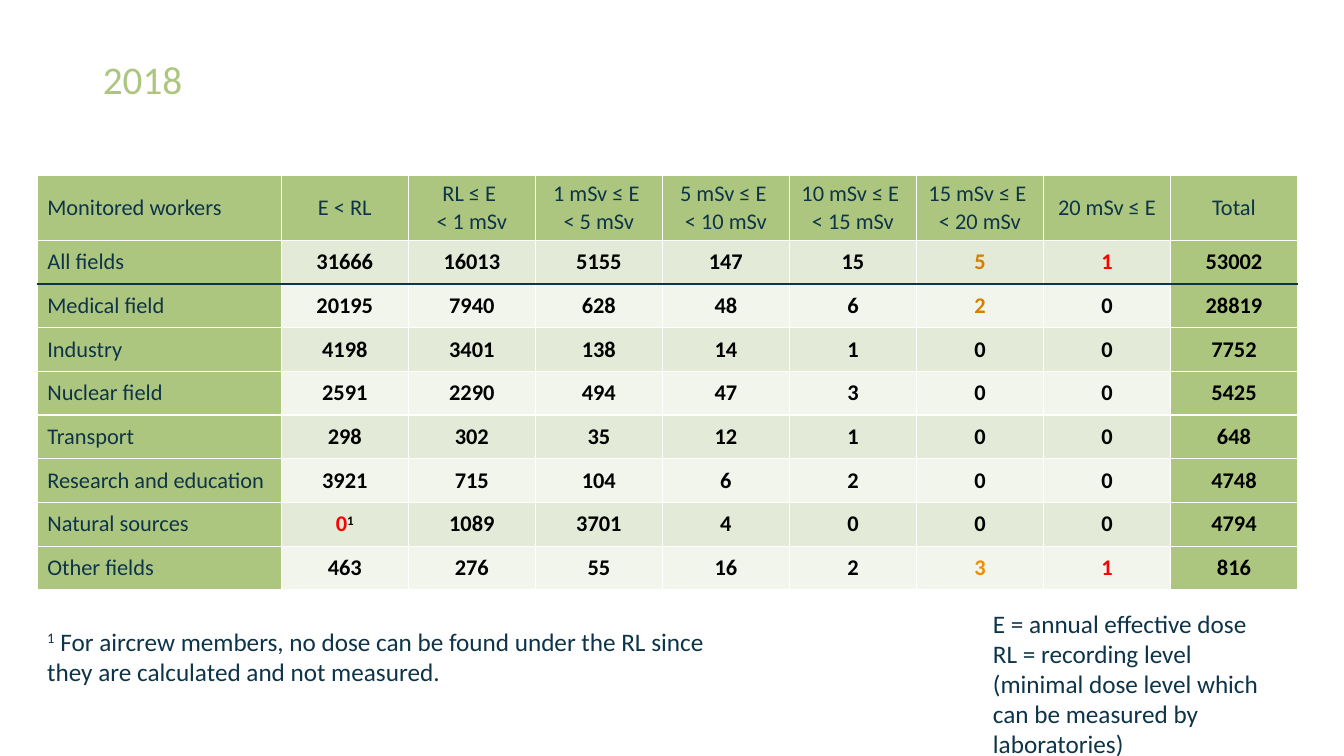
from lxml.etree import SubElement as Sub
from pptx import Presentation
from pptx.dml.color import RGBColor as RGB
from pptx.enum.text import MSO_ANCHOR as Anchor, MSO_AUTO_SIZE as Auto, PP_ALIGN as Align
from pptx.oxml.ns import qn
from pptx.util import Inches, Pt

COLORS = {
    "green": "ADC67F", "navy": "0E3449", "black": "000000", "white": "FFFFFF",
    "band": "E3EAD8", "pale": "F1F5EC", "red": "FF0000",
    "amber": "D67F00", "orange": "EE8E00",
}
HEADS = ["Monitored workers", "E < RL", "RL ≤ E \n< 1 mSv", "1 mSv ≤ E \n< 5 mSv",
         "5 mSv ≤ E \n< 10 mSv", "10 mSv ≤ E \n< 15 mSv", "15 mSv ≤ E \n< 20 mSv",
         "20 mSv ≤ E", "Total"]
DOSES = [
    ("All fields", 31666, 16013, 5155, 147, 15, 5, 1, 53002),
    ("Medical field", 20195, 7940, 628, 48, 6, 2, 0, 28819),
    ("Industry", 4198, 3401, 138, 14, 1, 0, 0, 7752),
    ("Nuclear field", 2591, 2290, 494, 47, 3, 0, 0, 5425),
    ("Transport", 298, 302, 35, 12, 1, 0, 0, 648),
    ("Research and education", 3921, 715, 104, 6, 2, 0, 0, 4748),
    ("Natural sources", 0, 1089, 3701, 4, 0, 0, 0, 4794),
    ("Other fields", 463, 276, 55, 16, 2, 3, 1, 816),
]
MARKS = {(1, 6): "amber", (1, 7): "red", (2, 6): "amber",
         (7, 1): "red", (8, 6): "orange", (8, 7): "red"}


def write(para, text, size=16, color="navy", bold=False, align=Align.LEFT, raised=False):
    para.alignment = align
    run = para.add_run()
    run.text = text
    font = run.font
    font.name, font.size, font.bold = "Calibri", Pt(size), bold
    font.color.rgb = RGB.from_string(COLORS[color])
    if raised:
        run._r.get_or_add_rPr().set("baseline", "30000")


def edge(cell, **sides):
    props = cell._tc.get_or_add_tcPr()
    for side in "LRTB":
        line = Sub(props, qn(f"a:ln{side}"), w=str(Pt(1)))
        fill = Sub(line, qn("a:solidFill"))
        Sub(fill, qn("a:srgbClr"), val=COLORS[sides.get(side, "white")])


def paint(cell, color):
    cell.fill.solid()
    cell.fill.fore_color.rgb = RGB.from_string(COLORS[color])
    cell.vertical_anchor = Anchor.MIDDLE


def add_title(slide, text):
    title = slide.shapes.title
    title.left, title.top = Inches(0.92), Inches(0.55)
    title.width, title.height = Inches(8.84), Inches(0.52)
    title.text_frame.vertical_anchor = Anchor.MIDDLE
    para = title.text_frame.paragraphs[0]
    para.line_spacing = 0.9
    write(para, text, size=28, color="green")


def add_grid(slide):
    rows, cols = len(DOSES) + 1, len(HEADS)
    frame = slide.shapes.add_table(rows, cols, Inches(0.37), Inches(1.74),
                                   Inches(12.49), Inches(4.11))
    grid = frame.table
    for c, col in enumerate(grid.columns):
        col.width = Inches(1.26 if c else 2.42)
    for r, row in enumerate(grid.rows):
        row.height = Inches(3.47 / len(DOSES) if r else 0.64)
    for r, values in enumerate([HEADS, *DOSES]):
        for c, value in enumerate(values):
            cell = grid.cell(r, c)
            edge(cell, T="navy" if r == 2 else "white", B="navy" if r == 1 else "white")
            outer = r == 0 or c in (0, cols - 1)
            paint(cell, "green" if outer else "band" if r % 2 else "pale")
            data = r > 0 and c > 0
            if data:
                cell.margin_left = cell.margin_right = 0
                cell.margin_top = cell.margin_bottom = 0
            text = cell.text_frame
            for i, part in enumerate(str(value).split("\n")):
                para = text.add_paragraph() if i else text.paragraphs[0]
                write(para, part, bold=data, align=Align.CENTER if c else Align.LEFT,
                      color=MARKS.get((r, c), "black" if data else "navy"))
    write(grid.cell(7, 1).text_frame.paragraphs[0], "1", color="black",
          bold=True, align=Align.CENTER, raised=True)


def add_note(slide, left, top, width, height, text, mark=""):
    box = slide.shapes.add_textbox(Inches(left), Inches(top), Inches(width), Inches(height))
    frame = box.text_frame
    frame.word_wrap = True
    frame.auto_size = Auto.SHAPE_TO_FIT_TEXT
    para = frame.paragraphs[0]
    if mark:
        write(para, mark, size=18, raised=True)
    write(para, text, size=18)


def main():
    deck = Presentation()
    deck.slide_width, deck.slide_height = Inches(13.33), Inches(7.5)
    slide = deck.slides.add_slide(deck.slide_layouts[5])
    add_title(slide, "2018")
    add_grid(slide)
    add_note(slide, 9.75, 6.28, 3.11, 1.31, "RL = recording level (minimal dose level "
             "which can be measured by laboratories)")
    add_note(slide, 9.75, 5.99, 3.11, 0.4, "E = annual effective dose")
    add_note(slide, 0.37, 6.16, 7.14, 0.71, " For aircrew members, no dose can be found "
             "under the RL since they are calculated and not measured.", mark="1")
    deck.save("out.pptx")


if __name__ == "__main__":
    main()
